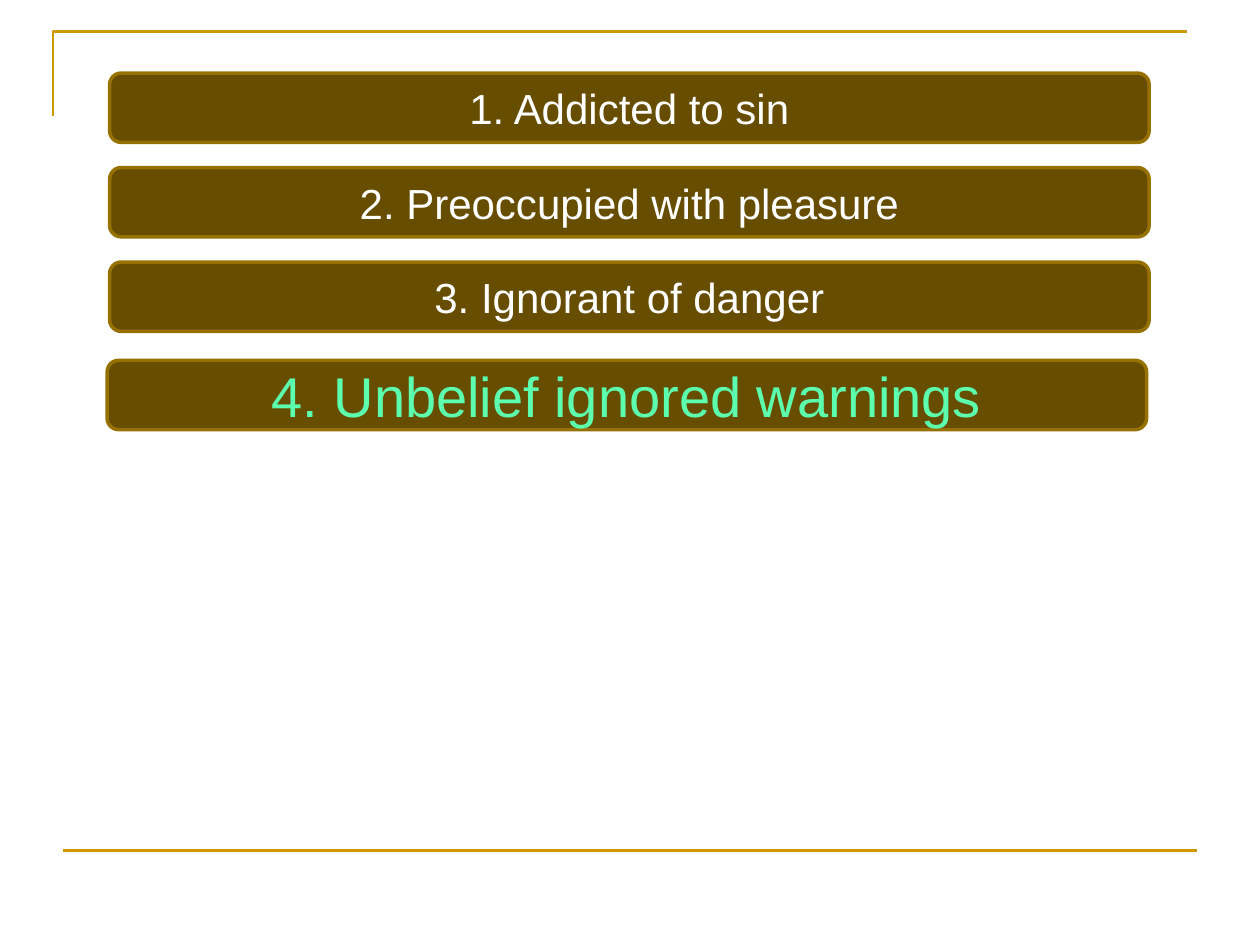
from dataclasses import dataclass

from lxml import etree
from pptx import Presentation
from pptx.dml.color import RGBColor
from pptx.enum.shapes import MSO_CONNECTOR, MSO_SHAPE
from pptx.enum.text import MSO_ANCHOR, PP_ALIGN
from pptx.oxml.ns import qn
from pptx.util import Inches, Pt

ROUNDED = MSO_SHAPE.ROUNDED_RECTANGLE
STRAIGHT = MSO_CONNECTOR.STRAIGHT
MIDDLE = MSO_ANCHOR.MIDDLE
CENTER = PP_ALIGN.CENTER


@dataclass(frozen=True)
class Theme:
    font: str = "Arial"
    rule: RGBColor = RGBColor(0xCC, 0x99, 0x00)
    bar_fill: RGBColor = RGBColor(0x66, 0x4D, 0x00)
    bar_line: RGBColor = RGBColor(0x97, 0x71, 0x00)
    plain: RGBColor = RGBColor(0xFF, 0xFF, 0xFF)
    accent: RGBColor = RGBColor(0x5C, 0xFF, 0xAD)
    plain_size: int = 24
    accent_size: int = 32
    rule_width: float = 1.5
    bar_width: float = 2


THEME = Theme()

# Content
POINTS = [
    "1. Addicted to sin",
    "2. Preoccupied with pleasure",
    "3. Ignorant of danger",
    "4. Unbelief ignored warnings",
]
CURRENT = len(POINTS) - 1

# Layout in inches
SLIDE_WIDTH, SLIDE_HEIGHT = 10, 7.5
BAR_LEFT, BAR_TOP, BAR_WIDTH, BAR_HEIGHT = 0.87, 0.58, 8.25, 0.55
BAR_PITCH = 0.75
CURRENT_SHIFT = (-0.02, 0.03)
CORNER = [(0.42, 0.92), (0.42, 0.25), (9.42, 0.25)]
FOOT_LEFT, FOOT_RIGHT = SLIDE_WIDTH * 0.05, SLIDE_WIDTH * 0.95
FOOT_TOP = SLIDE_HEIGHT * 0.9


def style_line(line, color, width):
    line.color.rgb = color
    line.width = Pt(width)


def add_frame(page):
    """Corner bracket at the top and rule at the foot."""
    start, *others = [(Inches(x), Inches(y)) for x, y in CORNER]
    builder = page.shapes.build_freeform(*start)
    builder.add_line_segments(others, close=False)
    bracket = builder.convert_to_shape()
    bracket.fill.background()
    bracket.shadow.inherit = False
    style_line(bracket.line, THEME.rule, THEME.rule_width)

    foot = page.shapes.add_connector(
        STRAIGHT, Inches(FOOT_LEFT), Inches(FOOT_TOP),
        Inches(FOOT_RIGHT), Inches(FOOT_TOP))
    style_line(foot.line, THEME.rule, THEME.rule_width)
    etree.SubElement(foot._element.spPr, qn("a:effectLst"))


def add_bar(page, row, text):
    """One numbered point; the current one is larger and coloured."""
    current = row == CURRENT
    shift_x, shift_y = CURRENT_SHIFT if current else (0, 0)
    bar = page.shapes.add_shape(
        ROUNDED, Inches(BAR_LEFT + shift_x),
        Inches(BAR_TOP + row * BAR_PITCH + shift_y),
        Inches(BAR_WIDTH), Inches(BAR_HEIGHT))
    bar.shadow.inherit = False
    bar.fill.solid()
    bar.fill.fore_color.rgb = THEME.bar_fill
    style_line(bar.line, THEME.bar_line, THEME.bar_width)

    frame = bar.text_frame
    frame.word_wrap = True
    frame.vertical_anchor = MIDDLE
    para = frame.paragraphs[0]
    para.text = text
    para.alignment = CENTER
    para.font.name = THEME.font
    para.font.size = Pt(THEME.accent_size if current else THEME.plain_size)
    para.font.color.rgb = THEME.accent if current else THEME.plain


def main():
    deck = Presentation()
    deck.slide_width, deck.slide_height = Inches(SLIDE_WIDTH), Inches(SLIDE_HEIGHT)
    page = deck.slides.add_slide(deck.slide_layouts.get_by_name("Blank"))
    add_frame(page)
    for row, text in enumerate(POINTS):
        add_bar(page, row, text)
    deck.save("out.pptx")


if __name__ == "__main__":
    main()
